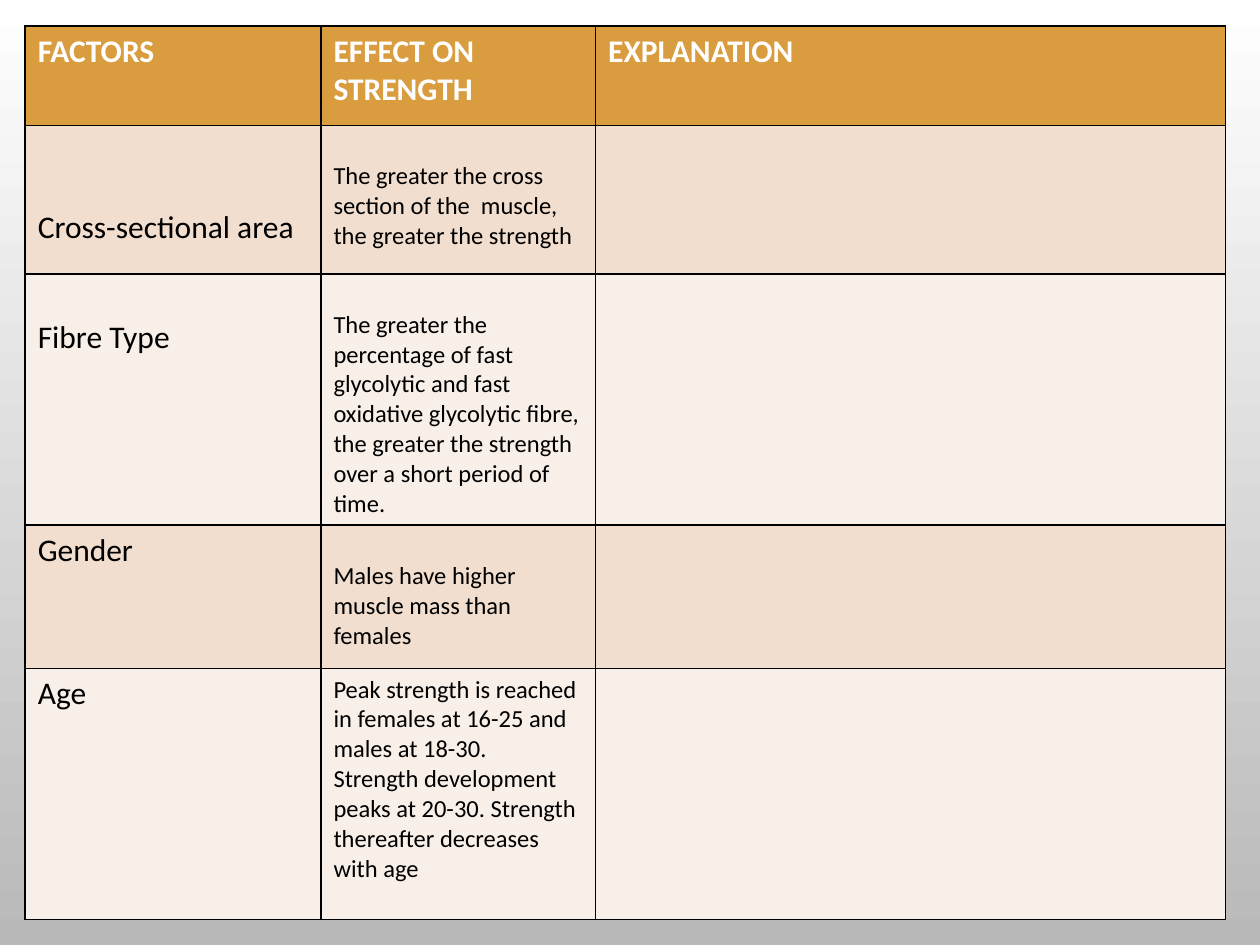
from lxml.etree import SubElement
from pptx import Presentation
from pptx.dml.color import RGBColor
from pptx.oxml.ns import qn
from pptx.util import Pt

HEADER_FILL, DARK_BAND, LIGHT_BAND = "D99C3F", "F1DECF", "F8EFE8"
BLACK, WHITE = "000000", "FFFFFF"
COLUMN_WIDTHS = (169, 157, 360)
HEADER_HEIGHT = 56.6
CELL_INSET = 3.6
FACTOR_SIZE, EFFECT_SIZE = 18, 14
LINE_RATIO = 1.22

HEADINGS = ("FACTORS", "EFFECT ON STRENGTH", "EXPLANATION")
# Row height, factor, lines it is lowered, effect, lines it is lowered
FACTORS = (
    (84.9, "Cross-sectional area", 2,
     "The greater the cross section of the  muscle, the greater the strength", 1),
    (143.4, "Fibre Type", 1,
     "The greater the percentage of fast glycolytic and fast oxidative "
     "glycolytic fibre, the greater the strength over a short period of time.", 1),
    (82, "Gender", 0, "Males have higher muscle mass than females", 1),
    (143.4, "Age", 0,
     "Peak strength is reached in females at 16-25 and males at 18-30.  "
     "Strength development peaks at 20-30. Strength thereafter decreases with age", 0),
)


def color(hex_value):
    return RGBColor.from_string(hex_value)


def set_background(slide, top, bottom):
    fill = slide.background.fill
    fill.gradient()
    fill.gradient_angle = 270
    for stop, shade in zip(fill.gradient_stops, (top, bottom)):
        stop.color.rgb = color(shade)


def set_borders(cell, hex_value, width):
    properties = cell._tc.get_or_add_tcPr()
    for side in ("a:lnL", "a:lnR", "a:lnT", "a:lnB"):
        line = SubElement(properties, qn(side), w=str(Pt(width)))
        solid = SubElement(line, qn("a:solidFill"))
        SubElement(solid, qn("a:srgbClr"), val=hex_value)


def style_cell(cell, fill):
    set_borders(cell, BLACK, 1)
    cell.fill.solid()
    cell.fill.fore_color.rgb = color(fill)


def write_cell(cell, text, size, font_color=BLACK, bold=False, lowered=0):
    cell.margin_top = Pt(round(CELL_INSET + lowered * size * LINE_RATIO, 1))
    paragraph = cell.text_frame.paragraphs[0]
    paragraph.text = text
    font = paragraph.font
    font.name = "Calibri"
    font.size = Pt(size)
    font.bold = bold
    font.color.rgb = color(font_color)


def add_factor_table(slide):
    heights = [HEADER_HEIGHT] + [factor[0] for factor in FACTORS]
    table = slide.shapes.add_table(
        len(heights), len(COLUMN_WIDTHS), Pt(14.4), Pt(15),
        Pt(sum(COLUMN_WIDTHS)), Pt(sum(heights))).table
    for column, width in zip(table.columns, COLUMN_WIDTHS):
        column.width = Pt(width)
    for row, height in zip(table.rows, heights):
        row.height = Pt(height)

    # Header row
    for cell, heading in zip(table.rows[0].cells, HEADINGS):
        style_cell(cell, HEADER_FILL)
        write_cell(cell, heading, FACTOR_SIZE, WHITE, bold=True)

    # Factor rows, with the explanations left open
    for index, (_, factor, factor_drop, effect, effect_drop) in enumerate(FACTORS):
        for cell in table.rows[index + 1].cells:
            style_cell(cell, LIGHT_BAND if index % 2 else DARK_BAND)
        write_cell(table.cell(index + 1, 0), factor, FACTOR_SIZE, lowered=factor_drop)
        write_cell(table.cell(index + 1, 1), effect, EFFECT_SIZE, lowered=effect_drop)


def main():
    presentation = Presentation()
    presentation.slide_width, presentation.slide_height = Pt(720), Pt(540)
    slide = presentation.slides.add_slide(presentation.slide_layouts[6])
    set_background(slide, WHITE, "B9B9B9")
    add_factor_table(slide)
    presentation.save("out.pptx")


if __name__ == "__main__":
    main()
